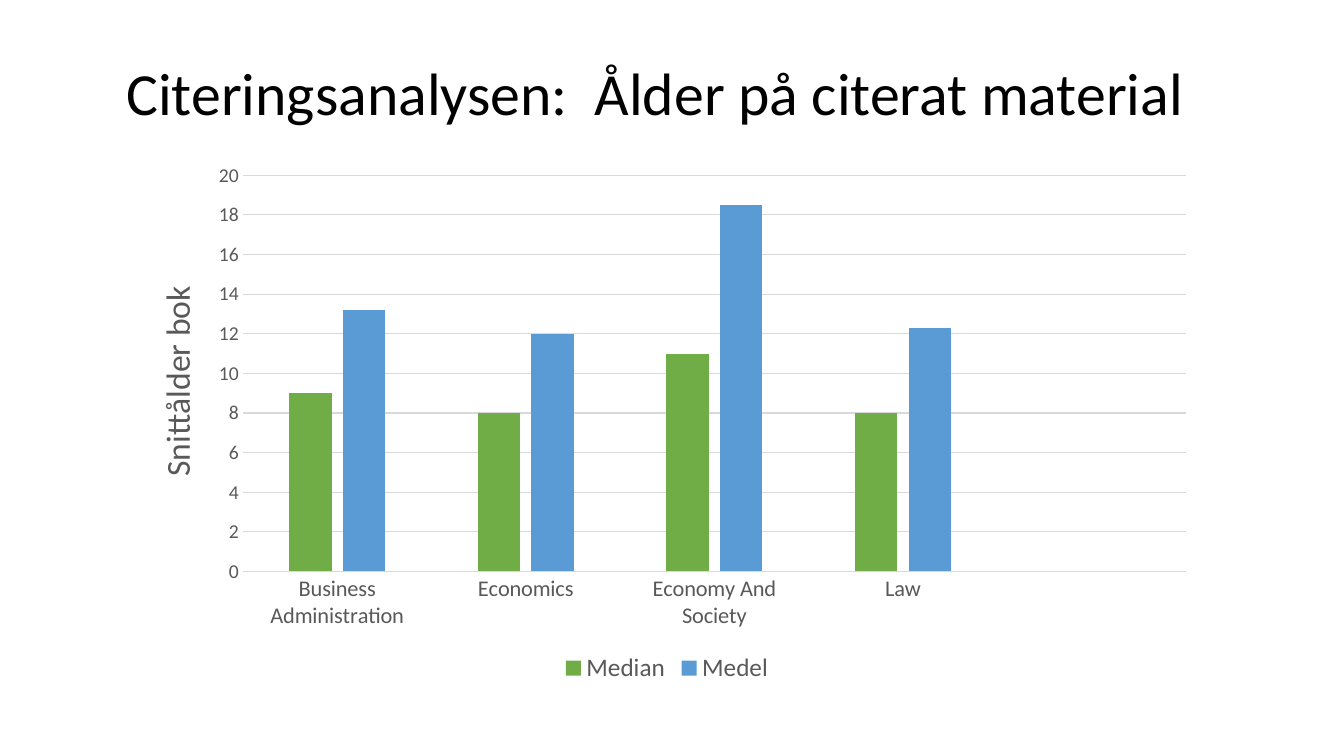
from dataclasses import dataclass

import lxml.etree
import pptx
import pptx.chart.data
import pptx.dml.color
import pptx.enum.chart
import pptx.enum.text
import pptx.oxml
import pptx.oxml.ns
import pptx.util

Inches = pptx.util.Inches
Pt = pptx.util.Pt
RGBColor = pptx.dml.color.RGBColor
qn = pptx.oxml.ns.qn

FONT = "Calibri"
BLACK = RGBColor(0x00, 0x00, 0x00)
GRAY = RGBColor(0x59, 0x59, 0x59)
LIGHT_GRAY = RGBColor(0xD9, 0xD9, 0xD9)
GREEN = RGBColor(0x70, 0xAD, 0x47)
BLUE = RGBColor(0x5B, 0x9B, 0xD5)


@dataclass(frozen=True)
class Box:
    left: float
    top: float
    width: float
    height: float

    def lengths(self) -> list[int]:
        return [Inches(v) for v in (self.left, self.top, self.width, self.height)]


@dataclass(frozen=True)
class Measure:
    name: str
    ages: tuple[float | None, ...]
    color: RGBColor


HEADING_BOX = Box(0.79, 0.52, 11.42, 0.87)
CHART_BOX = Box(1.26, 1.51, 10.71, 5.32)
PLOT_BOX = Box(2.41, 1.74, 9.35, 3.93)
AXIS_TITLE_BOX = Box(1.47, 2.78, 0.3, 1.92)

# The last slot on the axis is left empty.
SUBJECTS = ("Business Administration", "Economics", "Economy And Society", "Law", "")
MEASURES = (
    Measure("Median", (9, 8, 11, 8, None), GREEN),
    Measure("Medel", (13.2, 12, 18.5, 12.3, None), BLUE),
)


def style_font(font, size: float, color: RGBColor) -> None:
    font.name = FONT
    font.size = Pt(size)
    font.bold = False
    font.color.rgb = color


def style_line(line) -> None:
    line.color.rgb = LIGHT_GRAY
    line.width = Pt(0.75)


def set_layout(parent, box: Box, index: int, inner: bool = False) -> None:
    """Place a chart part by hand; only an inner plot area also takes a size."""
    for automatic in parent.findall(qn("c:layout")):
        parent.remove(automatic)
    layout = lxml.etree.Element(qn("c:layout"))
    manual = lxml.etree.SubElement(layout, qn("c:manualLayout"))
    settings: list[tuple[str, str | float]] = [
        ("xMode", "edge"),
        ("yMode", "edge"),
        ("x", (box.left - CHART_BOX.left) / CHART_BOX.width),
        ("y", (box.top - CHART_BOX.top) / CHART_BOX.height),
    ]
    if inner:
        settings.insert(0, ("layoutTarget", "inner"))
        settings += [
            ("w", box.width / CHART_BOX.width),
            ("h", box.height / CHART_BOX.height),
        ]
    for tag, value in settings:
        lxml.etree.SubElement(manual, qn(f"c:{tag}")).set("val", str(value))
    parent.insert(index, layout)


def add_heading(slide) -> None:
    frame = slide.shapes.add_textbox(*HEADING_BOX.lengths()).text_frame
    frame.word_wrap = True
    frame.vertical_anchor = pptx.enum.text.MSO_ANCHOR.MIDDLE
    paragraph = frame.paragraphs[0]
    paragraph.alignment = pptx.enum.text.PP_ALIGN.CENTER
    paragraph.line_spacing = 0.9
    run = paragraph.add_run()
    run.text = "Citeringsanalysen:  Ålder på citerat material"
    style_font(run.font, 42.7, BLACK)


def style_subject_axis(axis) -> None:
    axis.major_tick_mark = pptx.enum.chart.XL_TICK_MARK.NONE
    style_font(axis.tick_labels.font, 16, GRAY)
    style_line(axis.format.line)


def style_age_axis(axis) -> None:
    axis.minimum_scale, axis.maximum_scale, axis.major_unit = 0, 20, 2
    axis.major_tick_mark = pptx.enum.chart.XL_TICK_MARK.NONE
    style_font(axis.tick_labels.font, 14, GRAY)
    axis.format.line.fill.background()
    style_line(axis.major_gridlines.format.line)

    run = axis.axis_title.text_frame.paragraphs[0].add_run()
    run.text = "Snittålder bok"
    style_font(run.font, 24, GRAY)
    title = axis.axis_title.element
    body = title.find(".//" + qn("a:bodyPr"))
    body.set("rot", "-5400000")
    body.set("vert", "horz")
    set_layout(title, AXIS_TITLE_BOX, 1)


def add_age_chart(slide) -> None:
    data = pptx.chart.data.CategoryChartData()
    data.categories = SUBJECTS
    for measure in MEASURES:
        data.add_series(measure.name, measure.ages)
    chart = slide.shapes.add_chart(
        pptx.enum.chart.XL_CHART_TYPE.COLUMN_CLUSTERED, *CHART_BOX.lengths(), data
    ).chart
    style_font(chart.font, 10, BLACK)
    chart.has_title = False

    plot = chart.plots[0]
    plot.gap_width = 219
    plot.overlap = -27
    plot.vary_by_categories = False
    for series, measure in zip(plot.series, MEASURES):
        series.format.fill.solid()
        series.format.fill.fore_color.rgb = measure.color

    style_subject_axis(chart.category_axis)
    style_age_axis(chart.value_axis)
    chart.has_legend = True
    chart.legend.position = pptx.enum.chart.XL_LEGEND_POSITION.BOTTOM
    chart.legend.include_in_layout = False
    style_font(chart.legend.font, 18, GRAY)
    plot_area = chart.element.find(".//" + qn("c:plotArea"))
    set_layout(plot_area, PLOT_BOX, 0, inner=True)


def main() -> None:
    deck = pptx.Presentation()
    deck.slide_width = Inches(13.33)
    deck.slide_height = Inches(7.5)
    slide = deck.slides.add_slide(deck.slide_layouts[6])
    add_heading(slide)
    add_age_chart(slide)
    deck.save("out.pptx")


if __name__ == "__main__":
    main()
